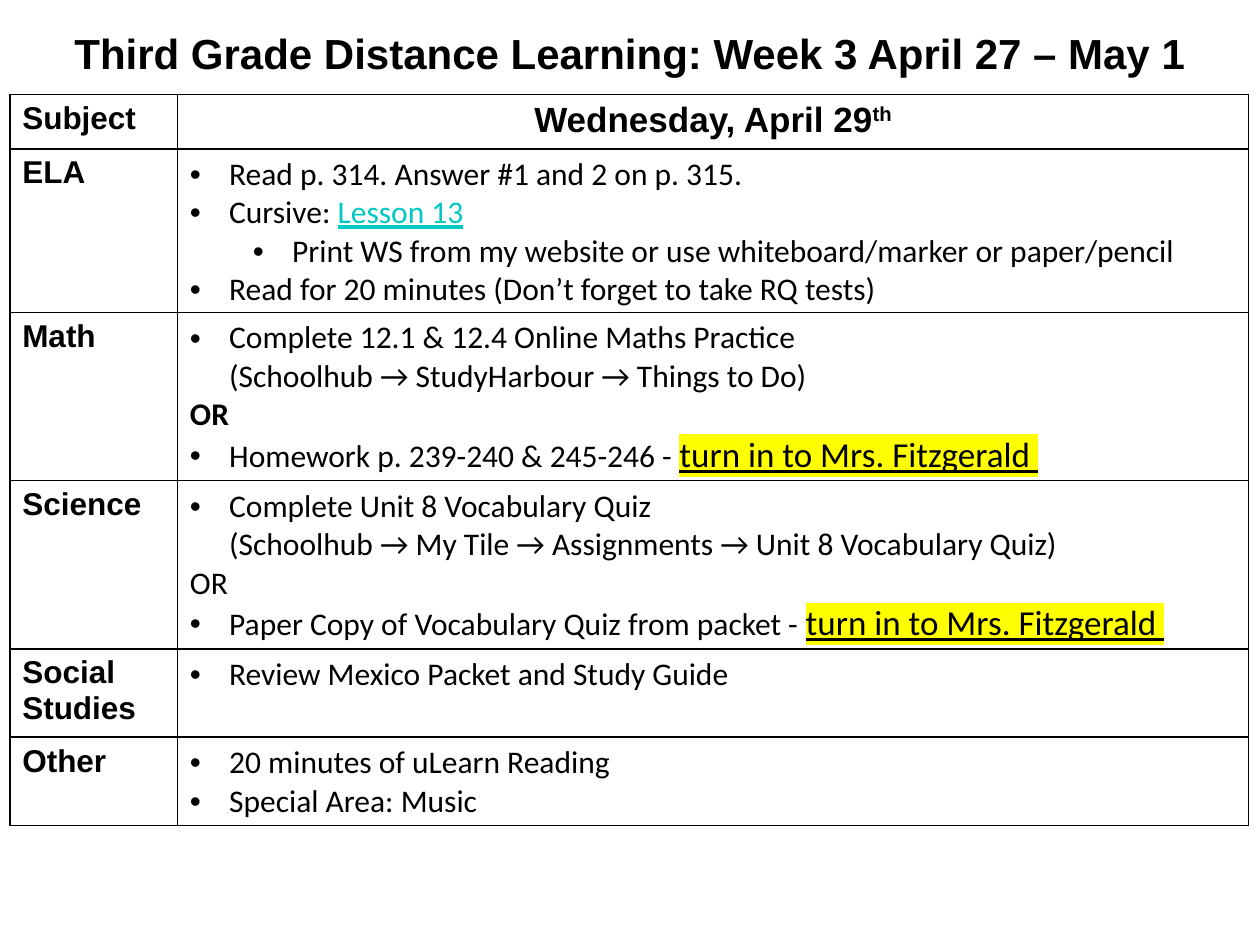
from dataclasses import dataclass

from lxml.etree import SubElement
from pptx import Presentation
from pptx.dml.color import RGBColor
from pptx.enum.text import MSO_ANCHOR, MSO_AUTO_SIZE, PP_ALIGN
from pptx.oxml.ns import qn
from pptx.util import Cm, Pt


@dataclass(frozen=True)
class Theme:
    ink: str = "000000"
    paper: str = "FFFFFF"
    link: str = "00C8C3"
    marker: str = "FFFF00"
    heading_font: str = "Arial"
    body_font: str = "Calibri"
    title_size: int = 24
    large_size: int = 20
    text_size: int = 18
    border_width: int = 1


THEME = Theme()
BULLET_HANG = Cm(0.79)
LEVEL_STEP = Cm(1.27)
TITLE = "Third Grade Distance Learning: Week 3 April 27 – May 1"
TURN_IN = ("turn in to Mrs. Fitzgerald ", "turn in")

# A line is (kind, piece, ...); a piece is (text, look).
DAY = ("heading", ("Wednesday, April 29", "large"), ("th", "superscript"))
LESSONS = [
    ("ELA", 3.3, [
        ("bullet", ("Read p. 314. Answer #1 and 2 on p. 315.", "body")),
        ("bullet", ("Cursive: ", "body"), ("Lesson 13", "link")),
        ("sub-bullet", ("Print WS from my website or use whiteboard/marker or paper/pencil", "body")),
        ("bullet", ("Read for 20 minutes (Don’t forget to take RQ tests)", "body")),
    ]),
    ("Math", 3.39, [
        ("bullet", ("Complete 12.1 & 12.4 Online Maths Practice\v"
                    "(Schoolhub → StudyHarbour → Things to Do)", "body")),
        ("plain", ("OR", "bold")),
        ("bullet", ("Homework p. 239-240 & 245-246 - ", "body"), TURN_IN),
    ]),
    ("Science", 3.39, [
        ("bullet", ("Complete Unit 8 Vocabulary Quiz\v"
                    "(Schoolhub → My Tile → Assignments → Unit 8 Vocabulary Quiz)", "body")),
        ("plain", ("OR", "body")),
        ("bullet", ("Paper Copy of Vocabulary Quiz from packet - ", "body"), TURN_IN),
    ]),
    ("Social Studies", 1.78, [
        ("bullet", ("Review Mexico Packet and Study Guide", "body")),
    ]),
    ("Other", 1.78, [
        ("bullet", ("20 minutes of uLearn Reading", "body")),
        ("bullet", ("Special Area: Music", "body")),
    ]),
]


def style_run(run, look):
    heading = look in ("title", "subject", "large", "superscript")
    font = run.font
    font.name = THEME.heading_font if heading else THEME.body_font
    font.bold = heading or look == "bold"
    font.underline = look in ("link", "turn in")
    font.color.rgb = RGBColor.from_string(THEME.link if look == "link" else THEME.ink)
    if look == "title":
        font.size = Pt(THEME.title_size)
    elif look in ("large", "superscript", "turn in"):
        font.size = Pt(THEME.large_size)
    else:
        font.size = Pt(THEME.text_size)

    properties = run._r.get_or_add_rPr()
    if look == "superscript":
        properties.set("baseline", "30000")
    if look == "turn in":
        highlight = SubElement(properties, qn("a:highlight"))
        SubElement(highlight, qn("a:srgbClr"), val=THEME.marker)
        properties.find(qn("a:latin")).addprevious(highlight)


def add_bullet(paragraph, level):
    paragraph.level = level
    properties = paragraph._p.get_or_add_pPr()
    properties.set("marL", str(BULLET_HANG + level * LEVEL_STEP))
    properties.set("indent", str(-BULLET_HANG))
    SubElement(properties, qn("a:buFont"), typeface=THEME.heading_font)
    SubElement(properties, qn("a:buChar"), char="•")


def write_lines(text_frame, lines):
    for number, (kind, *pieces) in enumerate(lines):
        paragraph = text_frame.add_paragraph() if number else text_frame.paragraphs[0]
        if kind == "heading":
            paragraph.alignment = PP_ALIGN.CENTER
        elif kind != "plain":
            add_bullet(paragraph, 1 if kind == "sub-bullet" else 0)
        for position, (text, look) in enumerate(pieces):
            if position:
                paragraph.add_run().text = text
                new_runs = paragraph.runs[-1:]
            else:
                paragraph.text = text
                new_runs = paragraph.runs
            for run in new_runs:
                style_run(run, look)


def format_cell(cell):
    """Give the cell its margins, borders and fill."""
    cell.margin_left = cell.margin_right = Cm(0.25)
    cell.margin_top, cell.margin_bottom = Cm(0.13), Cm(0.08)
    properties = cell._tc.get_or_add_tcPr()
    for side in ("lnL", "lnR", "lnT", "lnB"):
        border = SubElement(properties, qn(f"a:{side}"), w=str(Pt(THEME.border_width)))
        border_fill = SubElement(border, qn("a:solidFill"))
        SubElement(border_fill, qn("a:srgbClr"), val=THEME.ink)
    cell.fill.solid()
    cell.fill.fore_color.rgb = RGBColor.from_string(THEME.paper)


def place_title(title, left, top, width, height):
    title.left, title.top, title.width, title.height = left, top, width, height
    frame = title.text_frame
    frame.word_wrap = True
    frame.auto_size = MSO_AUTO_SIZE.SHAPE_TO_FIT_TEXT
    frame.vertical_anchor = MSO_ANCHOR.TOP
    write_lines(frame, [("heading", (TITLE, "title"))])


def add_schedule(slide, left, top, width):
    rows = [("Subject", 1.1, [DAY]), *LESSONS]
    total_height = Cm(sum(height for _, height, _ in rows))
    schedule = slide.shapes.add_table(len(rows), 2, left, top, width, total_height).table
    schedule.first_row = schedule.horz_banding = False
    subject_width = Cm(3.38)
    schedule.columns[0].width = subject_width
    schedule.columns[1].width = width - subject_width

    for number, (subject, height, lines) in enumerate(rows):
        schedule.rows[number].height = Cm(height)
        subject_cell, work_cell = schedule.cell(number, 0), schedule.cell(number, 1)
        format_cell(subject_cell)
        format_cell(work_cell)
        write_lines(subject_cell.text_frame, [("plain", (subject, "subject"))])
        write_lines(work_cell.text_frame, lines)


def main():
    deck = Presentation()
    deck.slide_width, deck.slide_height = Cm(25.4), Cm(19.05)
    slide = deck.slides.add_slide(deck.slide_layouts[5])
    place_title(slide.shapes.title, 0, Cm(0.43), deck.slide_width, Cm(1.27))
    add_schedule(slide, Cm(0.2), Cm(1.9), Cm(24.97))
    deck.save("out.pptx")


if __name__ == "__main__":
    main()
